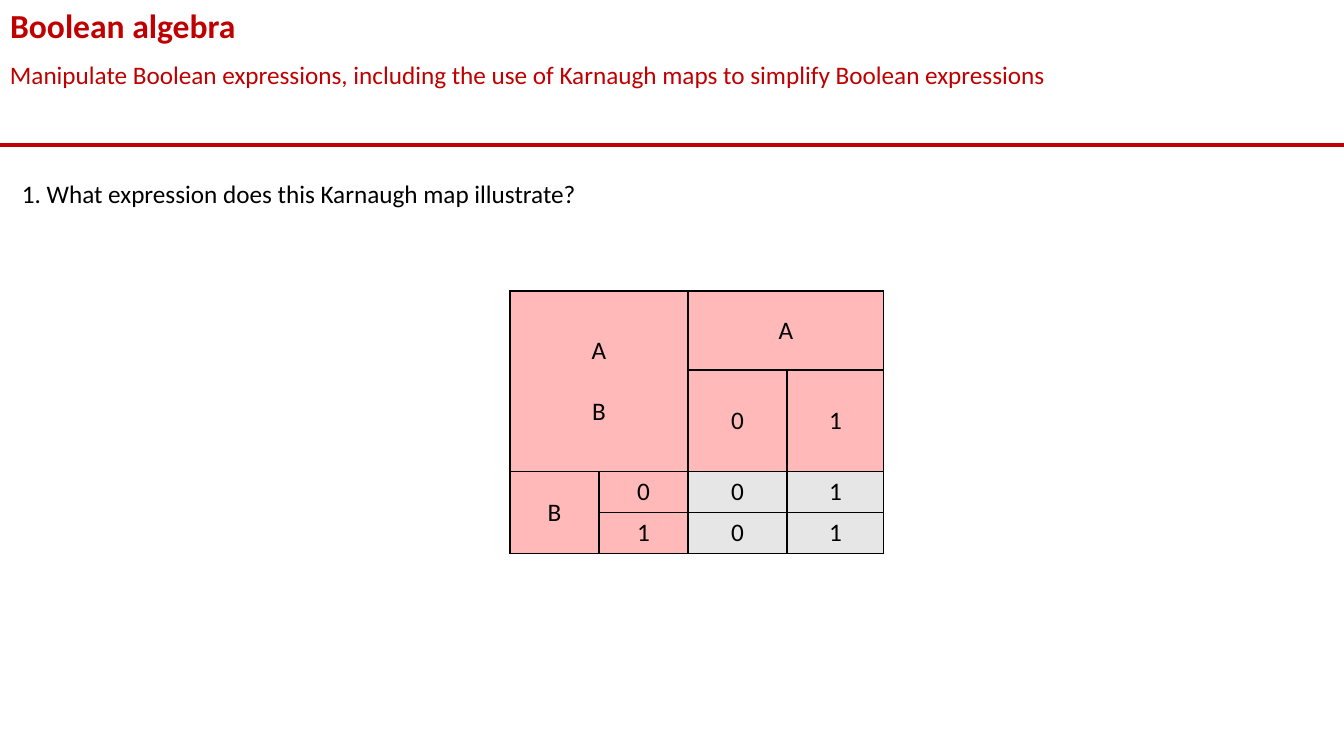
"""Build a slide asking which expression a two-variable Karnaugh map illustrates."""
from lxml import etree
from pptx import Presentation
from pptx.dml.color import RGBColor
from pptx.enum.shapes import MSO_CONNECTOR
from pptx.enum.text import MSO_ANCHOR, PP_ALIGN
from pptx.oxml import parse_xml
from pptx.oxml.ns import qn
from pptx.util import Pt

STRAIGHT = MSO_CONNECTOR.STRAIGHT
TOP, MIDDLE = MSO_ANCHOR.TOP, MSO_ANCHOR.MIDDLE
LEFT, CENTER = PP_ALIGN.LEFT, PP_ALIGN.CENTER
PX = 12192000 / 1344
RED, BLACK, PINK, GREY = "C00000", "000000", "FFB9B9", "E7E6E6"
DRAWING = "http://schemas.openxmlformats.org/drawingml/2006/main"


def color(hex_code):
    """Turn a hex string into a colour."""
    return RGBColor.from_string(hex_code)


def write(para, text, size, hex_code, align, bold=False):
    """Add one formatted run to a paragraph."""
    para.alignment = align
    span = para.add_run()
    span.text = text
    span.font.name = "Calibri"
    span.font.size = Pt(size)
    span.font.bold = bold
    span.font.color.rgb = color(hex_code)


deck = Presentation()
deck.slide_width, deck.slide_height = round(1344 * PX), round(756 * PX)
page = deck.slides.add_slide(deck.slide_layouts[5])

rule = page.shapes.add_connector(STRAIGHT, 0, round(145 * PX), deck.slide_width, round(145 * PX))
rule.line.color.rgb = color(RED)
rule.line.width = Pt(2.25)
etree.SubElement(rule._element.spPr, qn("a:effectLst"))

title = page.shapes.title
subtitle = page.shapes.add_textbox(0, 0, 0, 0)
question = page.shapes.add_textbox(0, 0, 0, 0)
headings = [
    (title, "Boolean algebra", (0, 0, 1344, 50), 24, RED, True),
    (subtitle, "Manipulate Boolean expressions, including the use of Karnaugh maps "
     "to simplify Boolean expressions", (0, 54, 1344, 40), 18, RED, False),
    (question, "1. What expression does this Karnaugh map illustrate?",
     (12, 173, 1318, 40), 18, BLACK, False),
]
for box, text, place, size, hex_code, bold in headings:
    box.left, box.top, box.width, box.height = [round(length * PX) for length in place]
    box.text_frame.word_wrap = True
    box.text_frame.vertical_anchor = TOP
    write(box.text_frame.paragraphs[0], text, size, hex_code, LEFT, bold)

column_widths = [89, 89, 99, 97]
row_heights = [79, 100, 41, 41]
map_place = [510, 291, sum(column_widths), sum(row_heights)]
karnaugh = page.shapes.add_table(4, 4, *[round(length * PX) for length in map_place]).table
for column, width in zip(karnaugh.columns, column_widths):
    column.width = round(width * PX)
for row, height in zip(karnaugh.rows, row_heights):
    row.height = round(height * PX)

for first, last in [((0, 0), (1, 1)), ((0, 2), (0, 3)), ((2, 0), (3, 0))]:
    karnaugh.cell(*first).merge(karnaugh.cell(*last))

labels = [
    ["AB", "", "A", ""],
    ["", "", "0", "1"],
    ["B", "0", "0", "1"],
    ["", "1", "0", "1"],
]
for row_index, row_labels in enumerate(labels):
    for column_index, label in enumerate(row_labels):
        cell = karnaugh.cell(row_index, column_index)
        cell.vertical_anchor = MIDDLE
        properties = cell._tc.get_or_add_tcPr()
        for side in "LRTB":
            properties.append(parse_xml(
                f'<a:ln{side} xmlns:a="{DRAWING}" w="12700"><a:solidFill>'
                f'<a:srgbClr val="{BLACK}"/></a:solidFill></a:ln{side}>'))
        cell.fill.solid()
        is_value = row_index > 1 and column_index > 1
        cell.fill.fore_color.rgb = color(GREY if is_value else PINK)
        for position, letter in enumerate(label):
            para = cell.text_frame.paragraphs[0]
            if position:
                para = cell.text_frame.add_paragraph()
                para.space_before = Pt(22)
            write(para, letter, 18, BLACK, CENTER)

deck.save("out.pptx")
